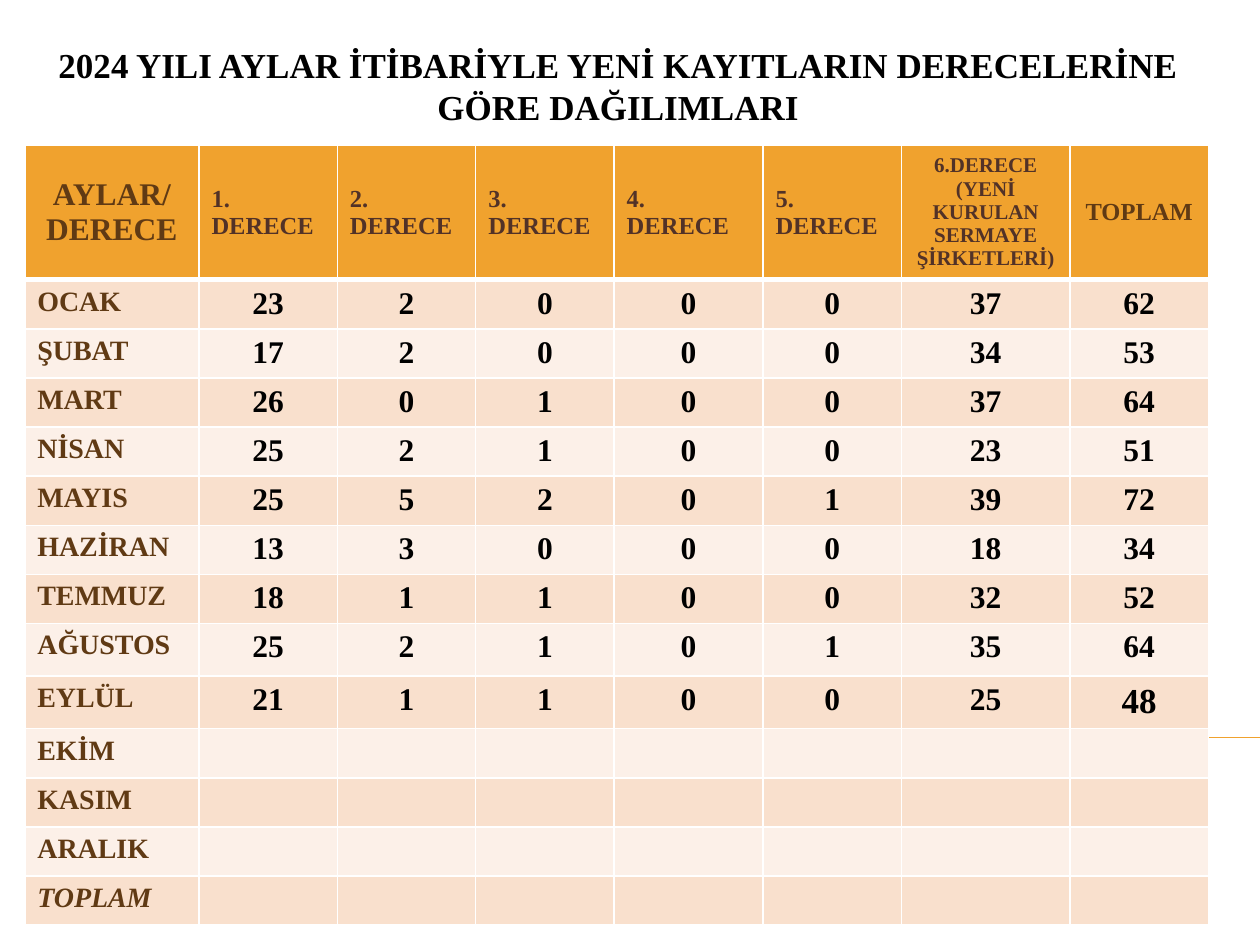
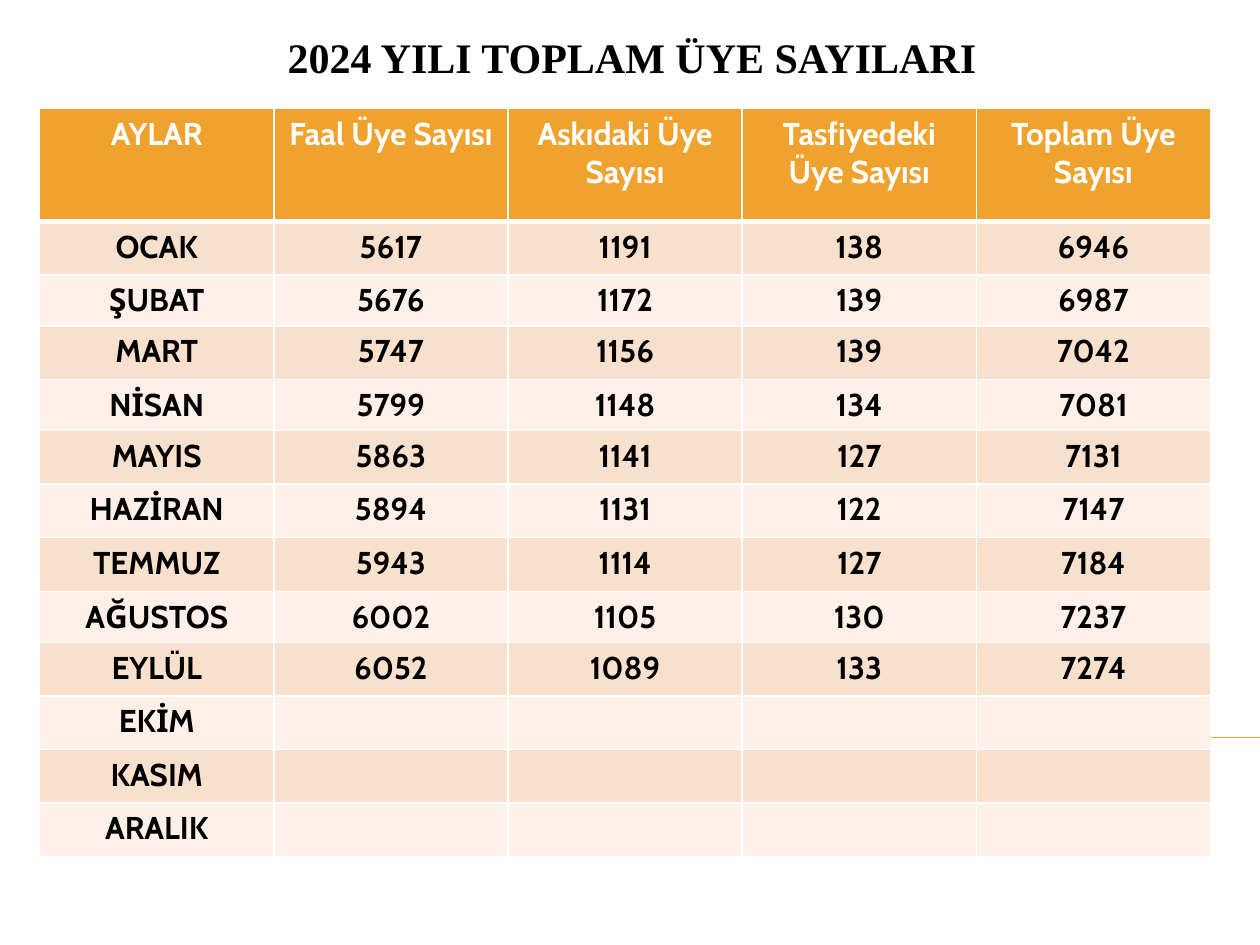
from dataclasses import dataclass
from lxml.etree import SubElement
from pptx import Presentation
from pptx.dml.color import RGBColor
from pptx.enum.shapes import MSO_CONNECTOR
from pptx.enum.text import MSO_ANCHOR, MSO_AUTO_SIZE, PP_ALIGN
from pptx.oxml.ns import qn
from pptx.util import Cm, Pt


@dataclass(frozen=True)
class Theme:
    accent: str = "F0A22E"
    bands: tuple = ("F9E0CD", "FCF0E8")
    white: str = "FFFFFF"
    black: str = "000000"
    brown: str = "603A14"
    dark_brown: str = "523227"
    serif: str = "Times New Roman"
    sans: str = "Cabin"
    small: int = 12
    label: int = 14
    month: int = 16
    body: int = 18
    large: int = 20
    heading: int = 24
    thin: float = 1
    thick: float = 3


THEME = Theme()
MONTHS = ["OCAK", "ŞUBAT", "MART", "NİSAN", "MAYIS", "HAZİRAN", "TEMMUZ",
          "AĞUSTOS", "EYLÜL", "EKİM", "KASIM", "ARALIK"]
REGISTRATIONS = [
    (23, 2, 0, 0, 0, 37, 62),
    (17, 2, 0, 0, 0, 34, 53),
    (26, 0, 1, 0, 0, 37, 64),
    (25, 2, 1, 0, 0, 23, 51),
    (25, 5, 2, 0, 1, 39, 72),
    (13, 3, 0, 0, 0, 18, 34),
    (18, 1, 1, 0, 0, 32, 52),
    (25, 2, 1, 0, 1, 35, 64),
    (21, 1, 1, 0, 0, 25, 48),
]
MEMBERS = [
    (5617, 1191, 138, 6946),
    (5676, 1172, 139, 6987),
    (5747, 1156, 139, 7042),
    (5799, 1148, 134, 7081),
    (5863, 1141, 127, 7131),
    (5894, 1131, 122, 7147),
    (5943, 1114, 127, 7184),
    (6002, 1105, 130, 7237),
    (6052, 1089, 133, 7274),
]


def set_all(target, formats):
    for name, value in formats.items():
        setattr(target, name, value)


def month_rows(labels, values):
    """Join labels and figures; labels without figures get empty cells."""
    blank = ("",) * len(values[0])
    padded = values + [blank] * (len(labels) - len(values))
    return [(label, *figures) for label, figures in zip(labels, padded)]


class DeckBuilder:
    def __init__(self, theme):
        self.theme = theme
        self.deck = Presentation()
        set_all(self.deck, {"slide_width": Cm(25.4), "slide_height": Cm(19.05)})
        self.page = None

    def start_page(self, title, box, size, anchor):
        self.page = self.deck.slides.add_slide(self.deck.slide_layouts[5])
        shape = self.page.shapes.title
        set_all(shape, dict(zip(("left", "top", "width", "height"), map(Cm, box))))
        set_all(shape.text_frame, {"word_wrap": True, "auto_size": MSO_AUTO_SIZE.NONE,
                                   "vertical_anchor": anchor})
        self.add_text(shape.text_frame, title, size=size)
        self.add_rule()

    def add_text(self, frame, text, size, color=None, font=None, italic=False,
                 align=PP_ALIGN.CENTER):
        para = frame.paragraphs[0]
        para.alignment = align
        span = para.add_run()
        span.text = str(text)
        set_all(span.font, {"name": font or self.theme.serif, "size": Pt(size),
                            "bold": True, "italic": italic})
        span.font.color.rgb = RGBColor.from_string(color or self.theme.black)

    def add_rule(self):
        rule = self.page.shapes.add_connector(
            MSO_CONNECTOR.STRAIGHT, Cm(1.42), Cm(14.86), Cm(25.4), Cm(14.86))
        rule.line.color.rgb = RGBColor.from_string(self.theme.accent)
        rule.line.width = Pt(0.75)
        SubElement(rule._element.spPr, qn("a:effectLst"))

    def add_borders(self, cell, top, bottom):
        thin = self.theme.thin
        properties = cell._tc.get_or_add_tcPr()
        for side, width in (("L", thin), ("R", thin), ("T", top), ("B", bottom)):
            line = SubElement(properties, qn(f"a:ln{side}"), w=str(Pt(width)))
            fill = SubElement(line, qn("a:solidFill"))
            SubElement(fill, qn("a:srgbClr"), val=self.theme.white)

    def add_table(self, left, top, widths, heights, rows, cell_format):
        """Draw rows; cell_format(row, column) gives text formats and the anchor."""
        theme = self.theme
        table = self.page.shapes.add_table(
            len(rows), len(widths), Cm(left), Cm(top),
            Cm(sum(widths)), Cm(sum(heights))).table
        set_all(table, {"first_row": False, "horz_banding": False})
        for column, width in zip(table.columns, widths):
            column.width = Cm(width)
        for r, (values, height) in enumerate(zip(rows, heights)):
            table.rows[r].height = Cm(height)
            for c, value in enumerate(values):
                cell = table.cell(r, c)
                self.add_borders(cell, theme.thick if r == 1 else theme.thin,
                                 theme.thick if r == 0 else theme.thin)
                cell.fill.solid()
                color = theme.bands[(r - 1) % 2] if r else theme.accent
                cell.fill.fore_color.rgb = RGBColor.from_string(color)
                if value == "":
                    set_all(cell, {"margin_top": 0, "margin_bottom": 0})
                    continue
                formats = cell_format(r, c)
                cell.vertical_anchor = formats.pop("anchor", MSO_ANCHOR.TOP)
                self.add_text(cell.text_frame, value, **formats)


def registration_format(row, column):
    if row == 0:
        formats = {"size": THEME.label, "color": THEME.dark_brown,
                   "anchor": MSO_ANCHOR.MIDDLE}
        if column == 0:
            formats.update(size=THEME.body, color=THEME.brown)
        elif column == 6:
            formats.update(size=THEME.small)
        elif column == 7:
            formats.update(color=THEME.brown)
        else:
            formats.update(align=PP_ALIGN.LEFT)
        return formats
    if column == 0:
        return {"size": THEME.month, "color": THEME.brown, "align": PP_ALIGN.LEFT,
                "italic": row > len(MONTHS)}
    latest_total = (row, column) == (len(REGISTRATIONS), 7)
    return {"size": THEME.large if latest_total else THEME.body}


def member_format(row, column):
    return {"size": THEME.body, "font": THEME.sans,
            "color": THEME.black if row else THEME.white}


def add_registrations(builder):
    builder.start_page(
        "2024 YILI AYLAR İTİBARİYLE YENİ KAYITLARIN DERECELERİNE GÖRE DAĞILIMLARI",
        (0.71, 0.74, 23.5, 1.6), THEME.large, MSO_ANCHOR.TOP)
    header = ("AYLAR/ DERECE", *(f"{degree}. DERECE" for degree in range(1, 6)),
              "6.DERECE (YENİ KURULAN SERMAYE ŞİRKETLERİ)", "TOPLAM")
    builder.add_table(
        0.5, 2.92,
        widths=[3.51, 2.79, 2.79, 2.79, 3, 2.79, 3.4, 2.79],
        heights=[2.72] + [0.99] * 7 + [1.06] * 2 + [0.99] * 4,
        rows=[header] + month_rows(MONTHS + ["TOPLAM"], REGISTRATIONS),
        cell_format=registration_format)


def add_members(builder):
    builder.start_page("2024 YILI TOPLAM ÜYE SAYILARI",
                       (0.99, 0.58, 23.5, 1.2), THEME.heading, MSO_ANCHOR.BOTTOM)
    header = ("AYLAR", "Faal Üye Sayısı", "Askıdaki Üye Sayısı",
              "Tasfiyedeki Üye Sayısı", "Toplam Üye Sayısı")
    low_rows = (2, 4, 8)
    builder.add_table(
        0.8, 2.19,
        widths=[4.72] * len(header),
        heights=[2.27] + [1.03 if row in low_rows else 1.08
                          for row in range(1, len(MONTHS) + 1)],
        rows=[header] + month_rows(MONTHS, MEMBERS),
        cell_format=member_format)


def main():
    builder = DeckBuilder(THEME)
    add_registrations(builder)
    add_members(builder)
    builder.deck.save("out.pptx")


if __name__ == "__main__":
    main()
